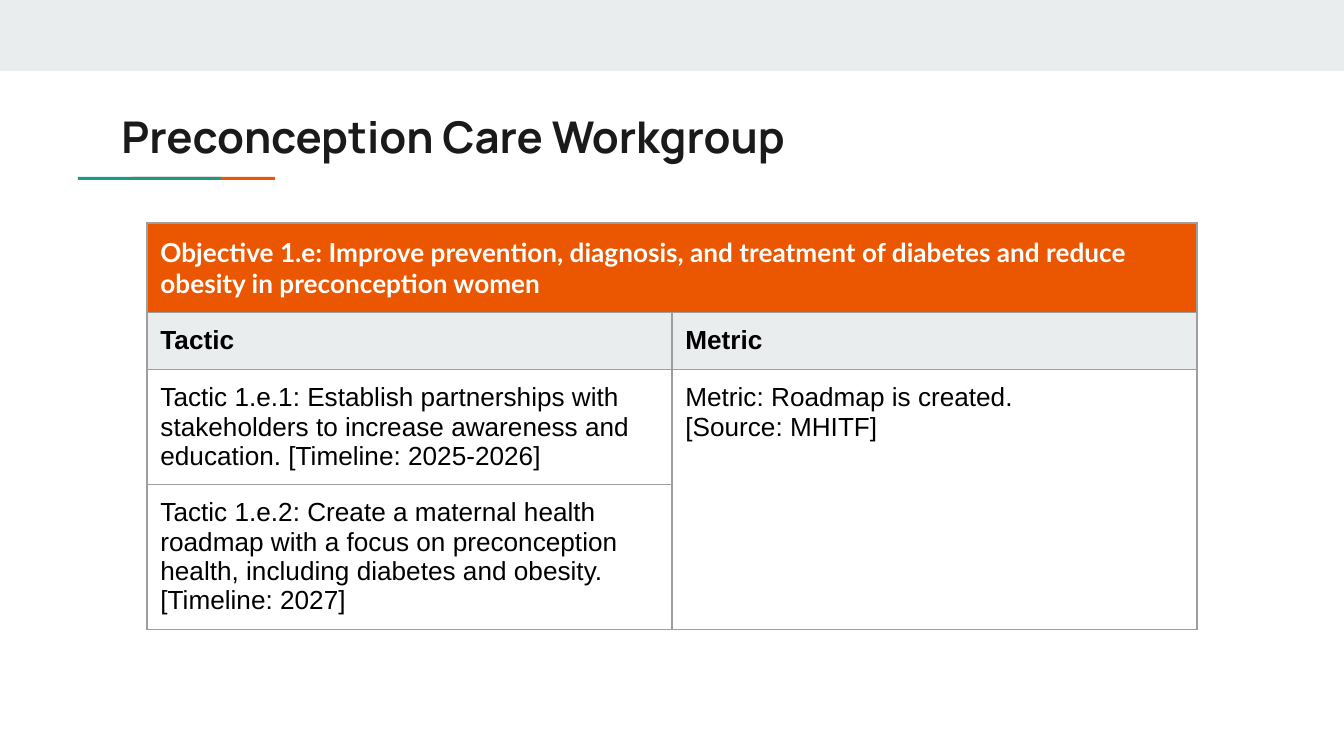
from dataclasses import dataclass

import pptx
import pptx.dml.color
import pptx.enum.shapes
import pptx.enum.text
import pptx.oxml
import pptx.oxml.ns
import pptx.util

EMU_PER_PX = 914400 / 134.4


def px(n):
    return pptx.util.Emu(round(n * EMU_PER_PX))


def rgb(value):
    return pptx.dml.color.RGBColor.from_string(value)


@dataclass(frozen=True)
class Theme:
    ink: str = "1A1A1A"
    text: str = "000000"
    white: str = "FFFFFF"
    pale: str = "E9EDEE"
    orange: str = "EB5600"
    teal: str = "1A9988"
    border: str = "9E9E9E"
    title_font: str = "Manrope"
    heading_font: str = "Lato"
    body_font: str = "Arial"
    title_size: float = 23.4
    table_size: float = 14
    border_width: float = 0.75
    inset: float = 0.1


class SlideBuilder:
    """Adds elements to one slide in the given theme; lengths are in px."""

    def __init__(self, s, theme):
        self.s = s
        self.theme = theme

    def style(self, tf, font, size, color, bold):
        for p in tf.paragraphs:
            for r in p.runs:
                r.font.name = font
                r.font.size = pptx.util.Pt(size)
                r.font.color.rgb = rgb(color)
                r.font.bold = bold

    def inset(self, box):
        margin = pptx.util.Inches(self.theme.inset)
        box.margin_left = box.margin_right = margin
        box.margin_top = box.margin_bottom = margin

    def bar(self, x, y, w, h, color):
        sp = self.s.shapes.add_shape(
            pptx.enum.shapes.MSO_SHAPE.RECTANGLE, px(x), px(y), px(w), px(h))
        sp.shadow.inherit = False
        sp.fill.solid()
        sp.fill.fore_color.rgb = rgb(color)
        sp.line.fill.background()

    def title(self, x, y, w, h, text):
        sp = self.s.shapes.title
        sp.left, sp.top, sp.width, sp.height = px(x), px(y), px(w), px(h)
        tf = sp.text_frame
        tf.text = text
        tf.word_wrap = True
        tf.auto_size = pptx.enum.text.MSO_AUTO_SIZE.NONE
        tf.vertical_anchor = pptx.enum.text.MSO_ANCHOR.MIDDLE
        tf.paragraphs[0].alignment = pptx.enum.text.PP_ALIGN.LEFT
        self.inset(tf)
        t = self.theme
        self.style(tf, t.title_font, t.title_size, t.ink, True)

    def table(self, x, y, col_widths, row_heights):
        frame = self.s.shapes.add_table(
            len(row_heights), len(col_widths), px(x), px(y),
            px(sum(col_widths)), px(sum(row_heights)))
        tbl = frame.table
        tbl.first_row = tbl.horz_banding = False
        for column, w in zip(tbl.columns, col_widths):
            column.width = px(w)
        for row, h in zip(tbl.rows, row_heights):
            row.height = px(h)
        for cell in tbl.iter_cells():
            self.borders(cell)
            self.inset(cell)
            cell.fill.background()
        return tbl

    def borders(self, cell):
        tcPr = cell._tc.get_or_add_tcPr()
        width = pptx.util.Pt(self.theme.border_width)
        for side in ("lnL", "lnR", "lnT", "lnB"):
            tcPr.append(pptx.oxml.parse_xml(
                f'<a:{side} {pptx.oxml.ns.nsdecls("a")} w="{width}"><a:solidFill>'
                f'<a:srgbClr val="{self.theme.border}"/></a:solidFill></a:{side}>'))

    def cell(self, cell, text, fill=None, font=None, color=None, bold=False):
        t = self.theme
        cell.text_frame.text = text
        if fill:
            cell.fill.solid()
            cell.fill.fore_color.rgb = rgb(fill)
        self.style(cell.text_frame, font or t.body_font, t.table_size,
                   color or t.text, bold)


def main():
    prs = pptx.Presentation()
    prs.slide_width, prs.slide_height = px(1344), px(756)
    s = prs.slides.add_slide(prs.slide_layouts[5])
    theme = Theme()
    b = SlideBuilder(s, theme)

    b.bar(0, 0, 1344, 71, theme.pale)
    b.bar(132, 177, 143, 3, theme.orange)
    b.bar(78, 177, 143, 3, theme.teal)
    b.title(108, 97, 1130, 79, "Preconception Care Workgroup")

    tbl = b.table(147, 223, [525, 525], [88, 57, 115, 145])
    tbl.cell(0, 0).merge(tbl.cell(0, 1))
    tbl.cell(2, 1).merge(tbl.cell(3, 1))
    b.cell(tbl.cell(0, 0),
           "Objective 1.e: Improve prevention, diagnosis, and treatment of "
           "diabetes and reduce obesity in preconception women",
           theme.orange, theme.heading_font, theme.white, True)
    for col, heading in enumerate(("Tactic", "Metric")):
        b.cell(tbl.cell(1, col), heading, theme.pale, bold=True)
    b.cell(tbl.cell(2, 0),
           "Tactic 1.e.1: Establish partnerships with stakeholders to increase "
           "awareness and education. [Timeline: 2025-2026]")
    b.cell(tbl.cell(2, 1), "Metric: Roadmap is created.\n[Source: MHITF]")
    b.cell(tbl.cell(3, 0),
           "Tactic 1.e.2: Create a maternal health roadmap with a focus on "
           "preconception\nhealth, including diabetes and obesity. "
           "[Timeline: 2027]")

    prs.save("out.pptx")


if __name__ == "__main__":
    main()
